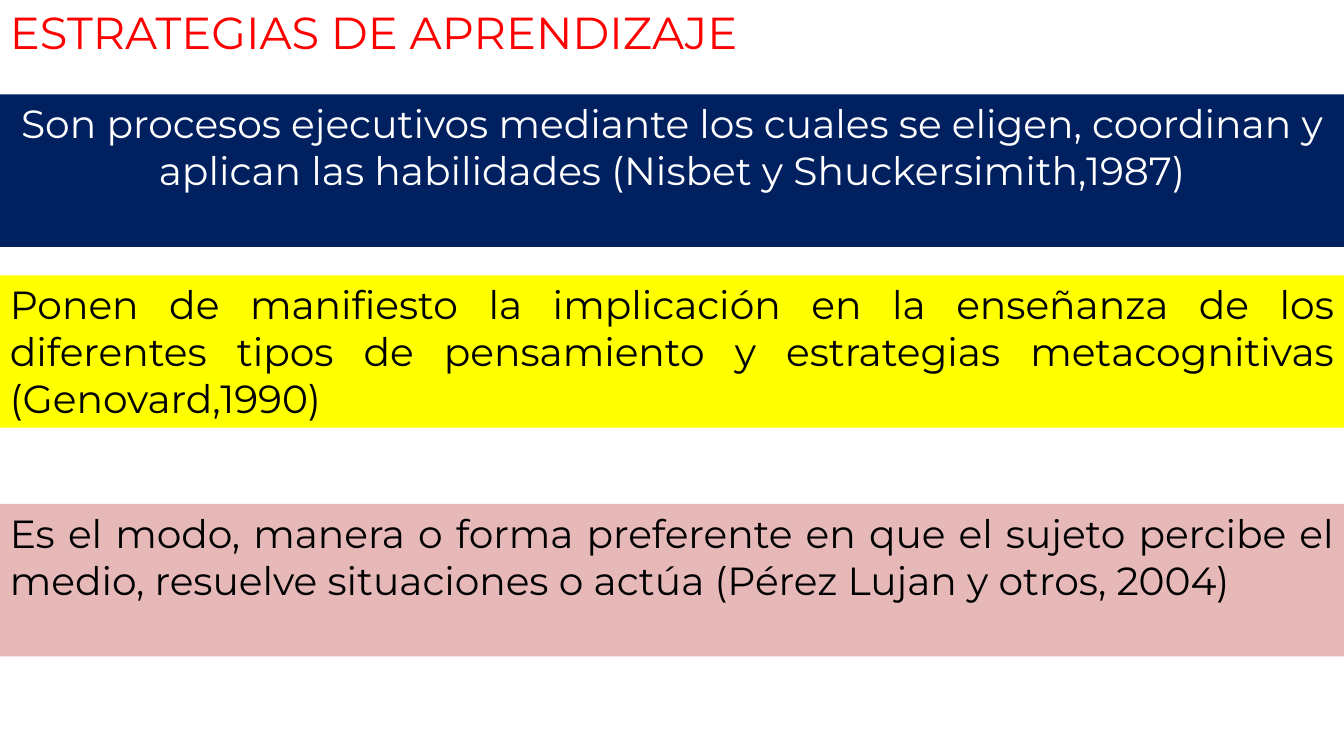
from pptx import Presentation
from pptx import util as u
from pptx.dml.color import RGBColor
from pptx.enum import shapes, text

RED = RGBColor(0xFF, 0x00, 0x00)
NAVY = RGBColor(0x00, 0x20, 0x60)
YELLOW = RGBColor(0xFF, 0xFF, 0x00)
PINK = RGBColor(0xE6, 0xB9, 0xB8)
WHITE = RGBColor(0xFF, 0xFF, 0xFF)
BLACK = RGBColor(0x00, 0x00, 0x00)

PAGE_WIDTH, PAGE_HEIGHT = 33.87, 19.05
BAND_HEIGHT = 3.84
CENTER, JUSTIFY, LEFT = (text.PP_ALIGN.CENTER, text.PP_ALIGN.JUSTIFY,
                         text.PP_ALIGN.LEFT)

BANDS = [
    (2.38, NAVY, WHITE, CENTER,
     "Son procesos ejecutivos mediante los cuales se eligen, coordinan y "
     "aplican las habilidades (Nisbet y Shuckersimith,1987)"),
    (6.94, YELLOW, BLACK, JUSTIFY,
     "Ponen de manifiesto la implicación en la enseñanza de los diferentes "
     "tipos de pensamiento y estrategias metacognitivas (Genovard,1990)"),
    (12.7, PINK, BLACK, JUSTIFY,
     "Es el modo, manera o forma preferente en que el sujeto percibe el "
     "medio, resuelve situaciones o actúa (Pérez Lujan y otros, 2004)"),
]


class StrategySlide:
    font_name = "Montserrat"
    frame_format = {
        "word_wrap": True,
        "auto_size": text.MSO_AUTO_SIZE.NONE,
        "vertical_anchor": text.MSO_ANCHOR.TOP,
        "margin_left": u.Cm(0.25), "margin_right": u.Cm(0.25),
        "margin_top": u.Cm(0.13), "margin_bottom": u.Cm(0.13),
    }

    def __init__(self, deck):
        self.page = deck.slides.add_slide(deck.slide_layouts[5])

    def fill_text(self, box, wording, size, color, alignment):
        frame = box.text_frame
        for name, value in self.frame_format.items():
            setattr(frame, name, value)
        para = frame.paragraphs[0]
        para.alignment = alignment
        span = para.add_run()
        span.text = wording
        font_format = {"name": self.font_name, "size": u.Pt(size), "bold": False}
        for name, value in font_format.items():
            setattr(span.font, name, value)
        span.font.color.rgb = color

    def title(self, wording):
        box = self.page.shapes.title
        place = {"left": 0, "top": 0, "width": 29.36, "height": 1.62}
        for name, value in place.items():
            setattr(box, name, u.Cm(value))
        self.fill_text(box, wording, 32, RED, LEFT)

    def band(self, top, fill, color, alignment, wording):
        """Add a full-width coloured band holding one definition."""
        box = self.page.shapes.add_shape(
            shapes.MSO_SHAPE.RECTANGLE,
            u.Cm(0), u.Cm(top), u.Cm(PAGE_WIDTH), u.Cm(BAND_HEIGHT))
        box.shadow.inherit = False
        box.fill.solid()
        box.fill.fore_color.rgb = fill
        box.line.fill.background()
        self.fill_text(box, wording, 28, color, alignment)


def main():
    deck = Presentation()
    deck.slide_width, deck.slide_height = u.Cm(PAGE_WIDTH), u.Cm(PAGE_HEIGHT)
    slide = StrategySlide(deck)
    slide.title("ESTRATEGIAS DE APRENDIZAJE")
    for band in BANDS:
        slide.band(*band)
    deck.save("out.pptx")


if __name__ == "__main__":
    main()
